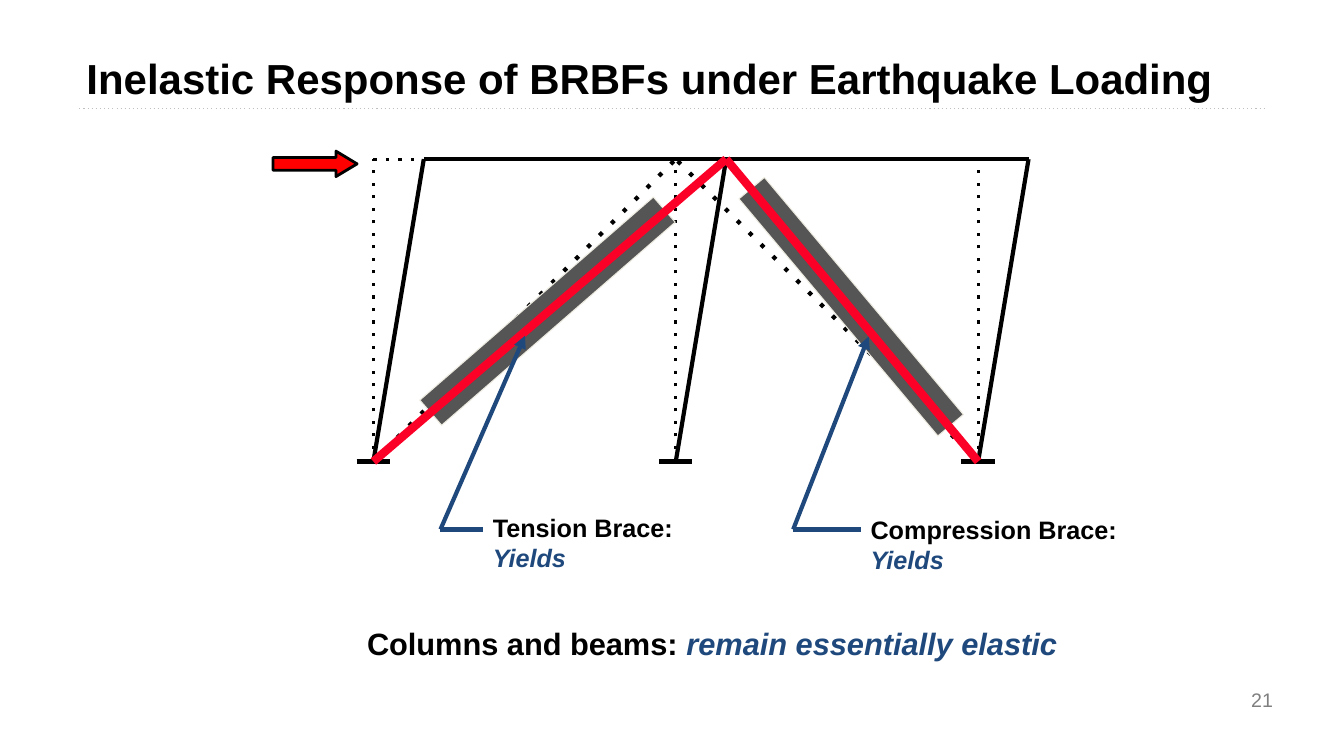
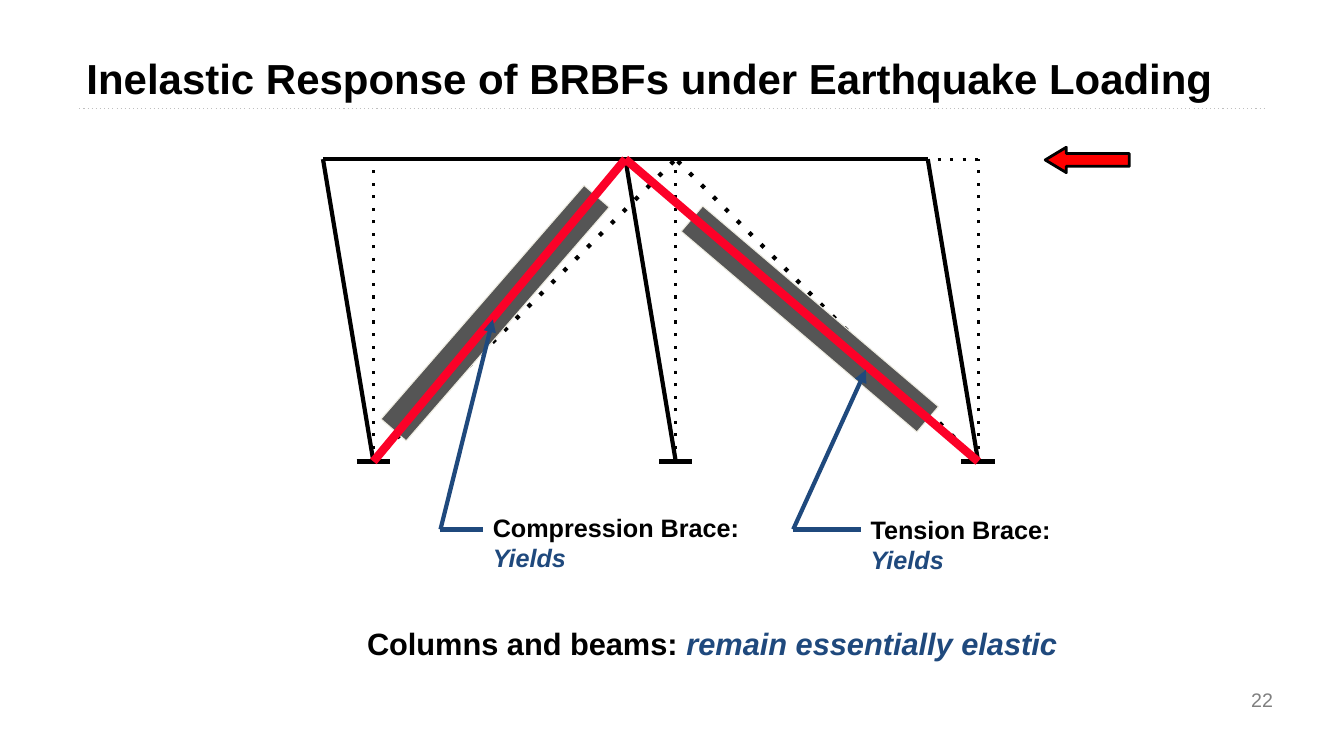
"""Builds two slides on the inelastic response of braced frames to earthquake loading."""
from lxml import etree
from pptx import Presentation
from pptx import util as u
from pptx.dml.color import RGBColor
from pptx.enum import shapes, text
from pptx.oxml.ns import qn

BLACK, BLUE, RED, BRACE_RED = "000000", "1F497D", "FF0000", "FC0128"
SLEEVE_GREY, SLEEVE_EDGE, RULE_GREY, NUMBER_GREY = "555555", "EEECE1", "BFBFBF", "7F7F7F"
FONT = "Arial"
TITLE = "Inelastic Response of BRBFs under Earthquake Loading"

BAY, DRIFT = 7.62, 1.27
BEAM, GROUND = 4.01, 11.63
COLUMNS = [9.41 + BAY * index for index in range(3)]
SUPPORT_HALF = 0.42
SLEEVE_LENGTH, SLEEVE_DEPTH = 7.8, 0.84
LEADER_Y = 13.34
LEADERS = [(11.1, 12.17, 12.78), (19.99, 21.69, 12.83)]
LABEL_WIDTHS = {"Tension": 5.51, "Compression": 8.05}

FRAMES = [
    {"number": "21", "drift": DRIFT, "load": (6.88, 3.81, 0),
     "braces": [("Tension", (13.8, 7.84, 319), (13.23, 8.46)),
                ("Compression", (21.45, 7.73, 50), (21.89, 8.48))]},
    {"number": "22", "drift": -DRIFT, "load": (26.34, 3.71, 180),
     "braces": [("Compression", (12.48, 7.89, 311), (12.42, 8.05)),
                ("Tension", (20.41, 8.04, 40.4), (21.82, 9.32))]},
]


def add_line(slide, start, end, color, width, dash=None, arrow=False):
    points = [u.Cm(value) for value in (*start, *end)]
    connector = slide.shapes.add_connector(shapes.MSO_CONNECTOR.STRAIGHT, *points)
    connector.line.color.rgb = RGBColor.from_string(color)
    connector.line.width = u.Pt(width)
    properties = connector._element.spPr
    outline = properties.find(qn("a:ln"))
    if dash:
        etree.SubElement(outline, qn("a:prstDash"), val=dash)
    if arrow:
        etree.SubElement(outline, qn("a:tailEnd"), type="triangle")
    etree.SubElement(properties, qn("a:effectLst"))


def add_text(slide, box, runs, size, align=text.PP_ALIGN.LEFT, anchor=text.MSO_ANCHOR.TOP):
    shape = slide.shapes.add_textbox(*[u.Cm(value) for value in box])
    shape.text_frame.word_wrap = True
    shape.text_frame.vertical_anchor = anchor
    paragraph = shape.text_frame.paragraphs[0]
    paragraph.alignment = align
    for wording, color, bold, italic in runs:
        run = paragraph.add_run()
        run.text = wording
        run.font.name = FONT
        run.font.size = u.Pt(size)
        run.font.bold = bold
        run.font.italic = italic
        run.font.color.rgb = RGBColor.from_string(color)


presentation = Presentation()
presentation.slide_width = u.Cm(33.87)
presentation.slide_height = u.Cm(19.05)

for frame in FRAMES:
    slide = presentation.slides.add_slide(presentation.slide_layouts[6])
    add_line(slide, (2, 2.73), (31.88, 2.73), RULE_GREY, 0.75, "dot")
    add_text(slide, (1.93, 1.2, 30.4, 1.73), [(TITLE, BLACK, True, False)], 30)
    add_text(slide, (24.43, 17.12, 7.9, 1.02), [(frame["number"], NUMBER_GREY, False, False)], 14,
             text.PP_ALIGN.RIGHT, text.MSO_ANCHOR.MIDDLE)

    left, middle, right = COLUMNS
    drift = frame["drift"]
    apex = (middle + drift, BEAM)
    add_line(slide, (left, BEAM), (right, BEAM), BLACK, 2.25, "dot")
    for column in COLUMNS:
        add_line(slide, (column, GROUND), (column, BEAM), BLACK, 2.25, "dot")
        add_line(slide, (column - SUPPORT_HALF, GROUND), (column + SUPPORT_HALF, GROUND), BLACK, 3)
    for base in (left, right):
        add_line(slide, (base, GROUND), (middle, BEAM), BLACK, 3, "dot")

    add_line(slide, (left + drift, BEAM), (right + drift, BEAM), BLACK, 3)
    for column in COLUMNS:
        add_line(slide, (column, GROUND), (column + drift, BEAM), BLACK, 3)

    load_x, load_y, load_rotation = frame["load"]
    load = slide.shapes.add_shape(shapes.MSO_SHAPE.RIGHT_ARROW, u.Cm(load_x), u.Cm(load_y),
                                  u.Cm(2.12), u.Cm(0.64))
    load.adjustments[1] = 0.83
    load.rotation = load_rotation
    load.shadow.inherit = False
    load.fill.solid()
    load.fill.fore_color.rgb = RGBColor.from_string(RED)
    load.line.color.rgb = RGBColor.from_string(BLACK)
    load.line.width = u.Pt(2)

    for base, leader, brace in zip((left, right), LEADERS, frame["braces"]):
        elbow, shelf_end, label_top = leader
        force, (center_x, center_y, rotation), tip = brace
        sleeve = slide.shapes.add_shape(
            shapes.MSO_SHAPE.RECTANGLE,
            u.Cm(center_x - SLEEVE_LENGTH / 2), u.Cm(center_y - SLEEVE_DEPTH / 2),
            u.Cm(SLEEVE_LENGTH), u.Cm(SLEEVE_DEPTH))
        sleeve.rotation = rotation
        sleeve.shadow.inherit = False
        sleeve.fill.solid()
        sleeve.fill.fore_color.rgb = RGBColor.from_string(SLEEVE_GREY)
        sleeve.line.color.rgb = RGBColor.from_string(SLEEVE_EDGE)
        sleeve.line.width = u.Pt(0.75)

        add_line(slide, (base, GROUND), apex, BRACE_RED, 6)
        add_line(slide, (elbow, LEADER_Y), tip, BLUE, 3, arrow=True)
        add_line(slide, (elbow, LEADER_Y), (shelf_end, LEADER_Y), BLUE, 3)
        add_text(slide, (shelf_end, label_top, LABEL_WIDTHS[force], 1.8),
                 [(f"{force} Brace: ", BLACK, True, False), ("Yields", BLUE, True, True)], 18)

    add_text(slide, (9, 15.62, 21.13, 1.2),
             [("Columns and beams: ", BLACK, True, False),
              ("remain essentially elastic", BLUE, True, True)], 22)

presentation.save("out.pptx")
